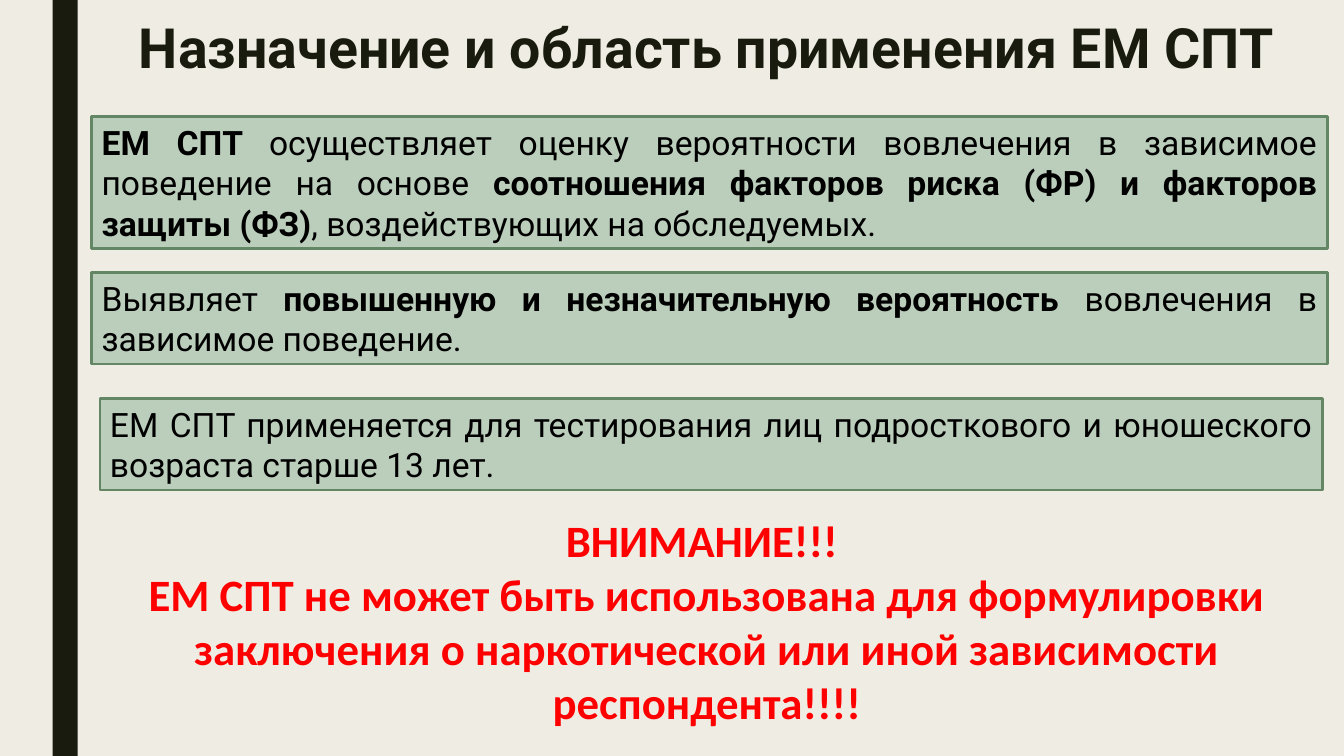
from pptx import Presentation
from pptx.dml.color import RGBColor
from pptx.enum.shapes import MSO_SHAPE
from pptx.enum.text import MSO_ANCHOR, PP_ALIGN
from pptx.util import Pt

RECTANGLE = MSO_SHAPE.RECTANGLE
TOP, MIDDLE = MSO_ANCHOR.TOP, MSO_ANCHOR.MIDDLE
CENTER, JUSTIFY = PP_ALIGN.CENTER, PP_ALIGN.JUSTIFY

CREAM = RGBColor(0xEF, 0xED, 0xE3)
DARK = RGBColor(0x19, 0x1B, 0x0E)
SAGE = RGBColor(0xBB, 0xCD, 0xBB)
GREEN = RGBColor(0x63, 0x87, 0x64)
BLACK = RGBColor(0, 0, 0)
RED = RGBColor(0xFF, 0, 0)


def add_panel(left, top, width, height, fill):
    panel = slide.shapes.add_shape(RECTANGLE, Pt(left), Pt(top), Pt(width), Pt(height))
    panel.shadow.inherit = False
    panel.fill.solid()
    panel.fill.fore_color.rgb = fill
    panel.line.fill.background()
    return panel


def write(frame, paragraphs, font_name, size, color, alignment, anchor):
    frame.word_wrap = True
    frame.vertical_anchor = anchor
    for index, pieces in enumerate(paragraphs):
        paragraph = frame.add_paragraph() if index else frame.paragraphs[0]
        paragraph.alignment = alignment
        for words, bold in pieces:
            run = paragraph.add_run()
            run.text = words
            run.font.name = font_name
            run.font.size = Pt(size)
            run.font.bold = bold
            run.font.color.rgb = color


prs = Presentation()
prs.slide_width = Pt(960)
prs.slide_height = Pt(540)
slide = prs.slides.add_slide(prs.slide_layouts[6])
slide.background.fill.solid()
slide.background.fill.fore_color.rgb = CREAM

add_panel(37.5, 0, 18, 540, DARK)

title = slide.shapes.add_textbox(Pt(65.5), Pt(11.5), Pt(879), Pt(62.5)).text_frame
write(title, [[("Назначение и область применения ЕМ СПТ", True)]],
      "Roboto", 39.6, DARK, CENTER, TOP)
title.paragraphs[0].line_spacing = 0.89

statements = [
    (65.5, 83, 882.5, 94.5, [
        ("ЕМ СПТ ", True),
        ("осуществляет оценку вероятности вовлечения в зависимое поведение на основе ", False),
        ("соотношения факторов риска (ФР) и факторов защиты (ФЗ)", True),
        (", воздействующих на обследуемых.", False)]),
    (65.5, 194.5, 882.5, 65.5, [
        ("Выявляет ", False),
        ("повышенную и незначительную вероятность ", True),
        ("вовлечения в зависимое поведение.", False)]),
    (71.5, 284.5, 873, 65.5, [
        ("ЕМ СПТ применяется для тестирования лиц подросткового и юношеского "
         "возраста старше 13 лет.", False)]),
]
for left, top, width, height, pieces in statements:
    statement = add_panel(left, top, width, height, SAGE)
    statement.line.color.rgb = GREEN
    statement.line.width = Pt(2)
    write(statement.text_frame, [pieces], "Roboto", 24, BLACK, JUSTIFY, MIDDLE)

warning = slide.shapes.add_textbox(Pt(65.5), Pt(363), Pt(879), Pt(162.5)).text_frame
write(warning, [
    [("ВНИМАНИЕ!!! ", True)],
    [("ЕМ СПТ не может быть использована для формулировки заключения "
      "о наркотической или иной зависимости респондента!!!!", True)],
], "Calibri", 32, RED, CENTER, TOP)

prs.save("out.pptx")
